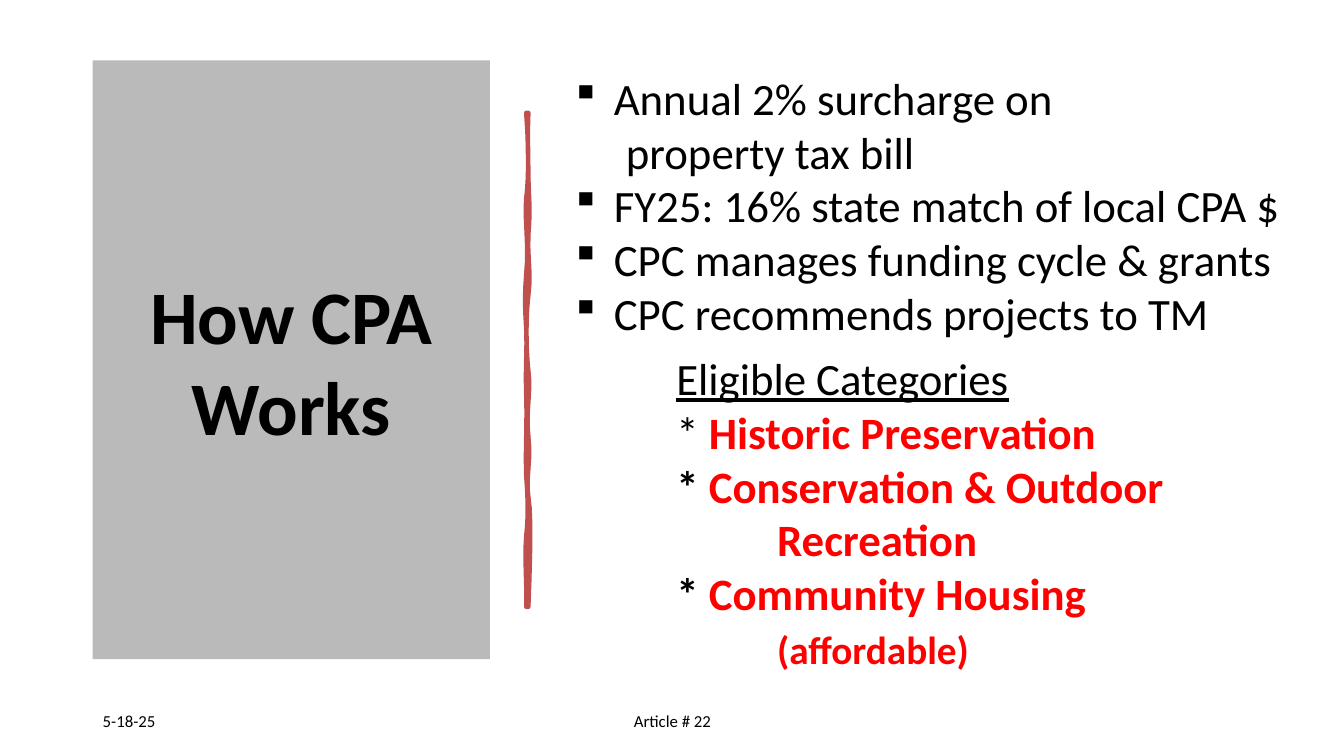
from pptx import Presentation
from pptx.dml.color import RGBColor
from pptx.enum import shapes, text
from pptx.oxml import parse_xml
from pptx.oxml.ns import nsdecls
from pptx.util import Inches, Pt

BLACK = RGBColor(0x00, 0x00, 0x00)
RED = RGBColor(0xFF, 0x00, 0x00)
GREY = RGBColor(0xBA, 0xBA, 0xBA)
BRICK = RGBColor(0xC0, 0x50, 0x4D)
FONT = "Calibri"
MIDDLE = text.MSO_ANCHOR.MIDDLE
CENTER = text.PP_ALIGN.CENTER

HEADING = "How CPA Works"
STAR = ("* ", {"bold": True})
POINT = {"indent": 0.38, "bullet": "§"}
CATEGORY = {"indent": 1}
DETAIL = {"indent": 2}
BODY = [
    ([("Annual 2% surcharge on", {})], POINT),
    ([("property tax bill", {})], {"indent": 0.5}),
    ([("FY25: 16% state match of local CPA $", {})], POINT),
    ([("CPC manages funding cycle & grants", {})], POINT),
    ([("CPC recommends projects to TM", {})], POINT),
    ([("Eligible Categories", {"underline": True})], {"indent": 1, "before": 8}),
    ([("* ", {}), ("Historic Preservation", {"bold": True, "color": RED})], CATEGORY),
    ([STAR, ("Conservation & Outdoor", {"bold": True, "color": RED})], CATEGORY),
    ([("Recreation", {"bold": True, "color": RED})], DETAIL),
    ([STAR, ("Community Housing", {"bold": True, "color": RED})], CATEGORY),
    ([("(affordable)", {"bold": True, "color": RED, "size": 28})],
     {"indent": 2, "before": 4}),
]
FOOTERS = [
    ("5-18-25", (0.92, 6.95, 3, 0.4), text.PP_ALIGN.LEFT),
    ("Article # 22", (4.42, 6.95, 4.5, 0.4), CENTER),
]

BRUSH_START = (5.24, 1.12)
BRUSH_CURVES = [
    ((5.23, 1.42), (5.24, 1.49), (5.24, 1.77)),
    ((5.25, 2.06), (5.26, 2.07), (5.24, 2.33)),
    ((5.23, 2.59), (5.27, 2.69), (5.24, 2.93)),
    ((5.21, 3.17), (5.22, 3.5), (5.24, 3.68)),
    ((5.27, 3.86), (5.21, 4.1), (5.24, 4.33)),
    ((5.27, 4.56), (5.21, 4.76), (5.24, 4.93)),
    ((5.27, 5.11), (5.26, 5.51), (5.24, 6.02)),
    ((5.23, 6.02), (5.23, 6.02), (5.22, 6.02)),
    ((5.23, 5.84), (5.2, 5.53), (5.22, 5.32)),
    ((5.24, 5.12), (5.24, 5), (5.22, 4.72)),
    ((5.21, 4.44), (5.23, 4.22), (5.22, 3.92)),
    ((5.21, 3.63), (5.23, 3.47), (5.22, 3.27)),
    ((5.21, 3.07), (5.2, 2.97), (5.22, 2.72)),
    ((5.25, 2.47), (5.2, 2.12), (5.22, 1.97)),
    ((5.24, 1.82), (5.25, 1.52), (5.22, 1.12)),
]
CURVE_STEPS = 6


def add_text(paragraph, words, size=32, color=BLACK, bold=False, underline=False):
    run = paragraph.add_run()
    run.text = words
    run.font.name = FONT
    run.font.size = Pt(size)
    run.font.bold = bold
    run.font.underline = underline
    run.font.color.rgb = color


def set_layout(paragraph, indent=0, bullet=None, before=0):
    paragraph.line_spacing = 1.0
    paragraph.space_before = Pt(before)
    properties = paragraph._p.get_or_add_pPr()
    properties.set("marL", str(Inches(indent)))
    properties.set("indent", str(-Inches(indent) if bullet else 0))
    if bullet:
        space = nsdecls("a")
        properties.append(parse_xml(
            f'<a:buFont {space} typeface="Wingdings" pitchFamily="2" charset="2"/>'))
        properties.append(parse_xml(f'<a:buChar {space} char="{bullet}"/>'))


def add_frame(slide, box):
    frame = slide.shapes.add_textbox(*map(Inches, box)).text_frame
    frame.word_wrap = True
    frame.vertical_anchor = MIDDLE
    return frame


def curve_points(start, curves):
    points = [start]
    for first, second, end in curves:
        for step in range(1, CURVE_STEPS + 1):
            t = step / CURVE_STEPS
            points.append(tuple(
                (1 - t) ** 3 * a + 3 * t * (1 - t) ** 2 * b
                + 3 * t ** 2 * (1 - t) * c + t ** 3 * d
                for a, b, c, d in zip(start, first, second, end)))
        start = end
    return [(Inches(x), Inches(y)) for x, y in points]


def main():
    deck = Presentation()
    deck.slide_width, deck.slide_height = Inches(13.33), Inches(7.5)
    slide = deck.slides.add_slide(deck.slide_layouts[6])

    panel = slide.shapes.add_shape(
        shapes.MSO_SHAPE.RECTANGLE, *map(Inches, (0.92, 0.6, 3.94, 5.94)))
    panel.shadow.inherit = False
    panel.fill.solid()
    panel.fill.fore_color.rgb = GREY
    panel.line.fill.background()
    panel.text_frame.word_wrap = True
    panel.text_frame.vertical_anchor = MIDDLE
    heading = panel.text_frame.paragraphs[0]
    heading.alignment = CENTER
    add_text(heading, HEADING, size=54, bold=True)

    start, *rest = curve_points(BRUSH_START, BRUSH_CURVES)
    outline = slide.shapes.build_freeform(*start)
    outline.add_line_segments(rest, close=True)
    brush = outline.convert_to_shape()
    brush.shadow.inherit = False
    brush.fill.solid()
    brush.fill.fore_color.rgb = BRICK
    brush.line.color.rgb = BRICK
    brush.line.width = Pt(3.25)

    body = add_frame(slide, (5.61, 0.62, 7.23, 6.13))
    for number, (runs, layout) in enumerate(BODY):
        paragraph = body.add_paragraph() if number else body.paragraphs[0]
        set_layout(paragraph, **layout)
        for words, style in runs:
            add_text(paragraph, words, **style)

    for words, box, alignment in FOOTERS:
        footer = add_frame(slide, box).paragraphs[0]
        footer.alignment = alignment
        add_text(footer, words, size=12)

    deck.save("out.pptx")


if __name__ == "__main__":
    main()
